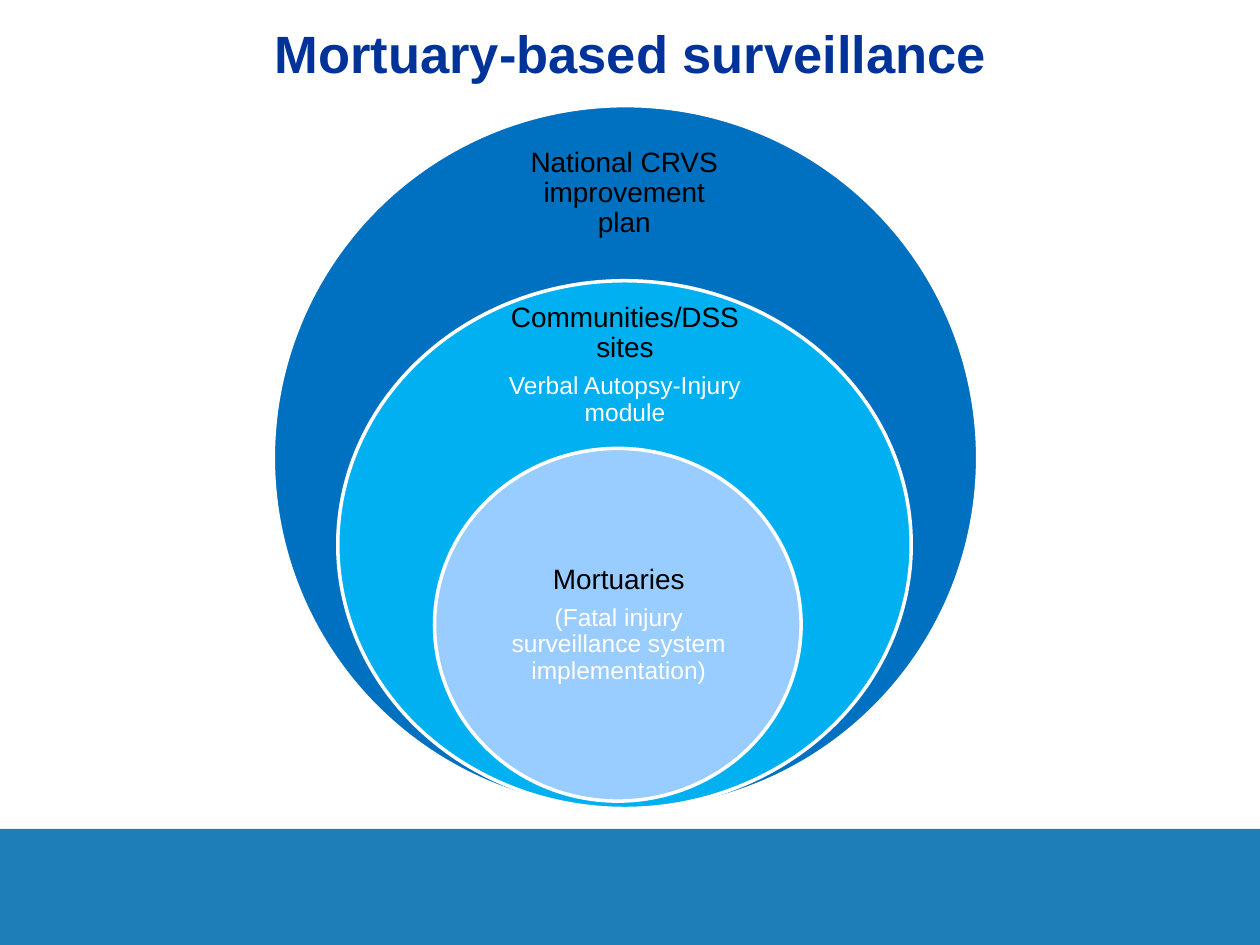
from lxml import etree
from pptx import Presentation
from pptx.dml.color import RGBColor
from pptx.enum import shapes, text
from pptx.util import Cm, Pt

HUES = {"band": "1E7FB8", "title": "003399", "outer": "0070C0", "middle": "00B0F0",
        "inner": "99CCFF", "white": "FFFFFF", "black": "000000"}
SIZE = (25.4, 19.05)
BAND = (0, 16.71, 25.4, 2.34)
TITLE = ("Mortuary-based surveillance", (0.51, -0.05, 24.41, 2.21))
HEAD = {"size": Pt(16), "name": "Arial", "hue": "black"}
NOTE = {"size": Pt(14), "name": "Arial", "hue": "white"}
RINGS = [
    ("outer", (5.51, 2.13, 14.2, 14.2), (10.11, 2.84, 4.95, 2.13),
     ["National CRVS improvement plan"]),
    ("middle", (6.81, 5.66, 11.56, 10.64), (9.91, 6.35, 5.38, 2.01),
     ["Communities/DSS sites", "Verbal Autopsy-Injury module"]),
    ("inner", (8.76, 9.04, 7.39, 7.11), (9.86, 10.82, 5.23, 3.56),
     ["Mortuaries", "(Fatal injury surveillance system implementation)"]),
]
SHADE = ('<a:effectLst xmlns:a="http://schemas.openxmlformats.org/drawingml/2006/main">'
         '<a:outerShdw dist="25400" dir="2700000"><a:srgbClr val="99CCFF"/>'
         '</a:outerShdw></a:effectLst>')


def tint(name):
    return RGBColor.from_string(HUES[name])


def style(font, form):
    for key, value in form.items():
        if key == "hue":
            font.color.rgb = tint(value)
        else:
            setattr(font, key, value)


def setup(frame, inset):
    form = {"word_wrap": True, "auto_size": text.MSO_AUTO_SIZE.NONE,
            "vertical_anchor": text.MSO_ANCHOR.MIDDLE}
    form.update({f"margin_{side}": Cm(inset) for side in ("left", "right", "top", "bottom")})
    for key, value in form.items():
        setattr(frame, key, value)


def draw(slide, kind, box, hue):
    shape = slide.shapes.add_shape(kind, *map(Cm, box))
    shape.shadow.inherit = False
    shape.fill.solid()
    shape.fill.fore_color.rgb = tint(hue)
    shape.line.fill.background()
    return shape


def label(slide, box, lines):
    frame = slide.shapes.add_textbox(*map(Cm, box)).text_frame
    setup(frame, 0.3)
    for i, (line, form) in enumerate(zip(lines, (HEAD, NOTE))):
        para = frame.add_paragraph() if i else frame.paragraphs[0]
        para.alignment = text.PP_ALIGN.CENTER
        para.line_spacing = 0.9
        para.space_after = Pt(form["size"].pt * 0.35)
        run = para.add_run()
        run.text = line
        style(run.font, form)


def head(slide):
    words, box = TITLE
    title = slide.shapes.title
    for key, value in zip(("left", "top", "width", "height"), box):
        setattr(title, key, Cm(value))
    setup(title.text_frame, 0)
    para = title.text_frame.paragraphs[0]
    para.alignment = text.PP_ALIGN.CENTER
    run = para.add_run()
    run.text = words
    style(run.font, {"size": Pt(30), "bold": True, "hue": "title"})
    run._r.get_or_add_rPr().append(etree.fromstring(SHADE))
    run.font.name = "Arial"


def main():
    deck = Presentation()
    deck.slide_width, deck.slide_height = map(Cm, SIZE)
    slide = deck.slides.add_slide(deck.slide_layouts[5])
    head(slide)
    draw(slide, shapes.MSO_SHAPE.RECTANGLE, BAND, "band")
    for hue, ring, box, lines in RINGS:
        oval = draw(slide, shapes.MSO_SHAPE.OVAL, ring, hue)
        oval.line.color.rgb = tint("white")
        oval.line.width = Pt(2)
        label(slide, box, lines)
    deck.save("out.pptx")


if __name__ == "__main__":
    main()
